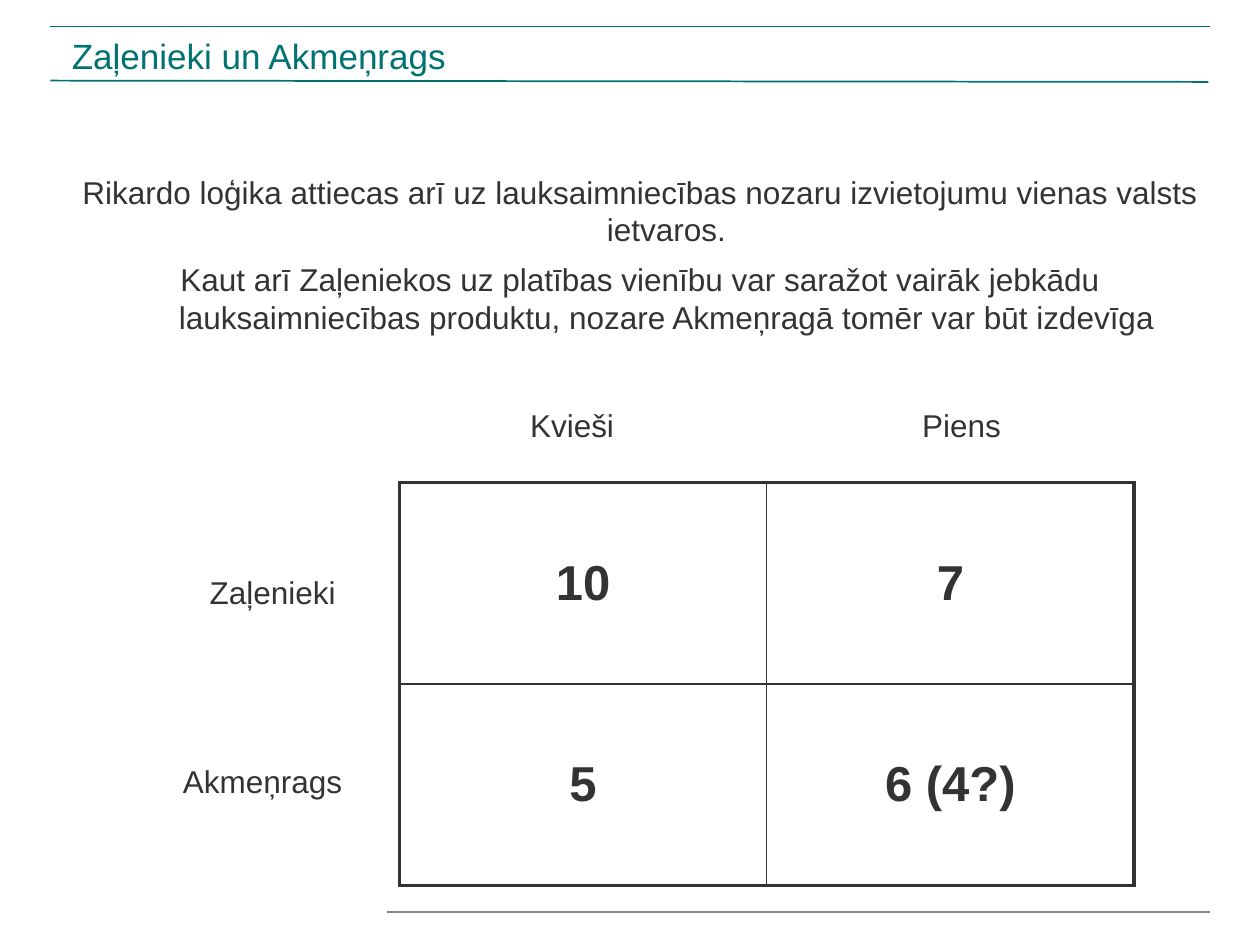
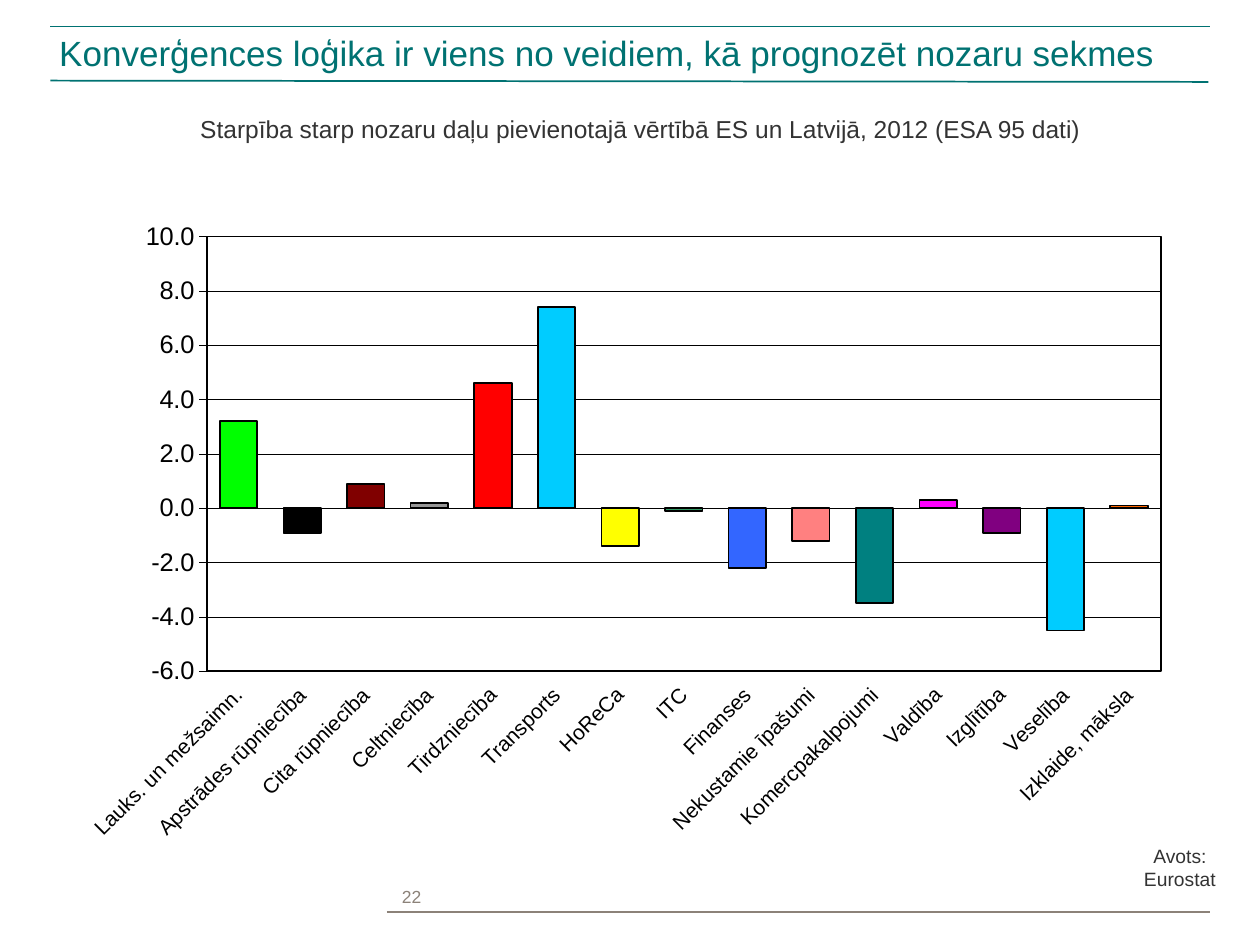
"""Two slides on where farming and other sectors settle: a yield table and a sector chart."""
from lxml import etree
from pptx import Presentation
from pptx.chart.data import CategoryChartData
from pptx.dml.color import RGBColor
from pptx.enum.chart import XL_CHART_TYPE, XL_TICK_LABEL_POSITION, XL_TICK_MARK
from pptx.enum.shapes import MSO_CONNECTOR
from pptx.enum.text import MSO_ANCHOR, PP_ALIGN
from pptx.oxml import parse_xml
from pptx.oxml.ns import nsdecls, qn
from pptx.util import Inches, Pt

COLUMN = XL_CHART_TYPE.COLUMN_CLUSTERED
LABELS_LOW = XL_TICK_LABEL_POSITION.LOW
TICK_OUT, TICK_NONE = XL_TICK_MARK.OUTSIDE, XL_TICK_MARK.NONE
STRAIGHT = MSO_CONNECTOR.STRAIGHT
LEFT, CENTER = PP_ALIGN.LEFT, PP_ALIGN.CENTER
TOP, MIDDLE, BOTTOM = MSO_ANCHOR.TOP, MSO_ANCHOR.MIDDLE, MSO_ANCHOR.BOTTOM

FONT = "Arial"
COLORS = {"teal": "007272", "taupe": "8C8279", "text": "333333", "black": "000000"}
TITLE_INSETS = (0.07, 0.04)

YIELDS = [["10", "7"], ["5", "6 (4?)"]]
SECTORS = [
    ("Lauks. un mežsaimn.", 3.2, "00FF00"),
    ("Apstrādes rūpniecība", -0.9, "000000"),
    ("Cita rūpniecība", 0.9, "800000"),
    ("Celtniecība", 0.2, "969696"),
    ("Tirdzniecība", 4.6, "FF0000"),
    ("Transports", 7.4, "00CCFF"),
    ("HoReCa", -1.4, "FFFF00"),
    ("ITC", -0.1, "339966"),
    ("Finanses", -2.2, "3366FF"),
    ("Nekustamie īpašumi", -1.2, "FF8080"),
    ("Komercpakalpojumi", -3.5, "008080"),
    ("Valdība", 0.3, "FF00FF"),
    ("Izglītība", -0.9, "800080"),
    ("Veselība", -4.5, "00CCFF"),
    ("Izklaide, māksla", 0.1, "FF6600"),
]


class Deck:
    """Holds the shared style and the slide being filled."""

    def __init__(self):
        self.presentation = Presentation()
        self.presentation.slide_width = Inches(10)
        self.presentation.slide_height = Inches(7.5)
        self.slide = None

    def add_slide(self, title, title_box):
        """Start a slide with the three rules and a title."""
        self.slide = self.presentation.slides.add_slide(self.presentation.slide_layouts[6])
        self.rule((3.07, 7.24), (9.6, 7.24), "taupe")
        self.rule((0.4, 0.64), (9.59, 0.65), "teal")
        self.rule((0.4, 0.21), (9.6, 0.21), "teal")
        frame = self.text(title_box, [title], 20, "teal", LEFT, MIDDLE, TITLE_INSETS)
        frame.paragraphs[0].line_spacing = 0.8

    def rule(self, start, end, color):
        """Draw a thin straight line."""
        connector = self.slide.shapes.add_connector(
            STRAIGHT, *[Inches(value) for value in (*start, *end)])
        self.style_line(connector.line, color, 1)
        etree.SubElement(connector._element.spPr, qn("a:effectLst"))

    def style_line(self, line, color, width):
        """Set the colour and width of a line."""
        line.color.rgb = RGBColor.from_string(COLORS[color])
        line.width = Pt(width)

    def style_font(self, font, size, color, bold=False):
        """Set the deck font on a font object."""
        font.name, font.size, font.bold = FONT, Pt(size), bold
        font.color.rgb = RGBColor.from_string(COLORS[color])

    def text(self, box, paragraphs, size, color="text", align=CENTER, anchor=TOP,
             insets=(0.1, 0.05), hanging=0, space_before=0):
        """Add a wrapped text box and return its frame."""
        shape = self.slide.shapes.add_textbox(*[Inches(value) for value in box])
        frame = shape.text_frame
        frame.word_wrap = True
        frame.vertical_anchor = anchor
        frame.margin_left = frame.margin_right = Inches(insets[0])
        frame.margin_top = frame.margin_bottom = Inches(insets[1])
        for index, content in enumerate(paragraphs):
            paragraph = frame.add_paragraph() if index else frame.paragraphs[0]
            paragraph.text = content
            paragraph.alignment = align
            if index:
                paragraph.space_before = Pt(space_before)
            if hanging:
                properties = paragraph._p.get_or_add_pPr()
                properties.set("marL", str(Inches(hanging)))
                properties.set("indent", str(-Inches(hanging)))
            self.style_font(paragraph.font, size, color)
        return frame

    def table(self, box, rows):
        """Add an evenly split table with a heavy frame and light inner lines."""
        row_count, column_count = len(rows), len(rows[0])
        frame = self.slide.shapes.add_table(
            row_count, column_count, *[Inches(value) for value in box])
        table = frame.table
        table.first_row = table.horz_banding = False
        for row, values in enumerate(rows):
            for column, value in enumerate(values):
                cell = table.cell(row, column)
                cell.text = value
                cell.vertical_anchor = MIDDLE
                cell.fill.background()
                paragraph = cell.text_frame.paragraphs[0]
                paragraph.alignment = CENTER
                self.style_font(paragraph.font, 28, "text", bold=True)
                self.borders(cell, {
                    "L": column == 0, "R": column == column_count - 1,
                    "T": row == 0, "B": row == row_count - 1})

    def borders(self, cell, outer_sides):
        """Draw the four cell borders, heavier on the outer sides."""
        properties = cell._tc.get_or_add_tcPr()
        for index, (side, outer) in enumerate(outer_sides.items()):
            width = Pt(2.25 if outer else 1)
            properties.insert(index, parse_xml(
                f'<a:ln{side} {nsdecls("a")} w="{width}"><a:solidFill>'
                f'<a:srgbClr val="{COLORS["text"]}"/></a:solidFill></a:ln{side}>'))

    def column_chart(self, box, points, plot_box):
        """Add a column chart with one colour per category."""
        data = CategoryChartData(number_format="0.0")
        data.categories = [name for name, _, _ in points]
        data.add_series("Series 1", [value for _, value, _ in points])
        chart = self.slide.shapes.add_chart(
            COLUMN, *[Inches(value) for value in box], data).chart
        chart.has_legend = chart.has_title = False
        self.style_font(chart.font, 14.5, "black")
        plot = chart.plots[0]
        plot.gap_width = 70
        plot.vary_by_categories = False
        series = plot.series[0]
        series.invert_if_negative = False
        for index, (_, _, color) in enumerate(points):
            bar = series.points[index].format
            bar.fill.solid()
            bar.fill.fore_color.rgb = RGBColor.from_string(color)
            self.style_line(bar.line, "black", 1)
        self.style_axes(chart)
        self.place_plot(chart, plot_box)

    def style_axes(self, chart):
        """Set scale, grid and labels of both axes."""
        values, categories = chart.value_axis, chart.category_axis
        values.minimum_scale, values.maximum_scale, values.major_unit = -6, 10, 2
        values.tick_labels.number_format = "#,##0.0"
        values.tick_labels.number_format_is_linked = False
        self.style_line(values.format.line, "black", 0.25)
        self.style_line(values.major_gridlines.format.line, "black", 0.25)
        categories.tick_label_position = LABELS_LOW
        categories.format.line.fill.background()
        for axis, size in ((values, 14.5), (categories, 12)):
            axis.major_tick_mark, axis.minor_tick_mark = TICK_OUT, TICK_NONE
            self.style_font(axis.tick_labels.font, size, "black")
        body = categories._element.find(qn("c:txPr")).find(qn("a:bodyPr"))
        body.set("rot", str(-45 * 60000))
        body.set("vert", "horz")

    def place_plot(self, chart, plot_box):
        """Fix the inner plot area and frame it."""
        area = chart._chartSpace.chart.plotArea
        for layout in area.findall(qn("c:layout")):
            area.remove(layout)
        sizes = "".join(f'<c:{key} val="{value}"/>' for key, value in zip("xywh", plot_box))
        area.insert(0, parse_xml(
            f'<c:layout {nsdecls("c")}><c:manualLayout><c:layoutTarget val="inner"/>'
            f'<c:xMode val="edge"/><c:yMode val="edge"/>{sizes}</c:manualLayout></c:layout>'))
        area.append(parse_xml(
            f'<c:spPr {nsdecls("c", "a")}><a:noFill/><a:ln w="{Pt(1)}"><a:solidFill>'
            f'<a:srgbClr val="{COLORS["black"]}"/></a:solidFill></a:ln></c:spPr>'))


def main():
    """Build both slides and save the deck."""
    deck = Deck()

    deck.add_slide("Zaļenieki un Akmeņrags", (0.5, 0, 9, 0.95))
    deck.text((0.58, 1.33, 9, 1.42), [
        "Rikardo loģika attiecas arī uz lauksaimniecības nozaru izvietojumu "
        "vienas valsts ietvaros.",
        "Kaut arī Zaļeniekos uz platības vienību var saražot vairāk jebkādu "
        "lauksaimniecības produktu, nozare Akmeņragā tomēr var būt izdevīga",
    ], 18, insets=(0.04, 0.04), hanging=0.42, space_before=7)
    deck.table((3.17, 3.83, 5.83, 3.2), YIELDS)
    for label, left, top, width in (
            ("Kvieši", 3.33, 3.17, 2.42), ("Piens", 6.42, 3.17, 2.42),
            ("Zaļenieki", 1.33, 4.5, 1.67), ("Akmeņrags", 1.25, 6, 1.67)):
        deck.text((left, top, width, 0.4), [label], 18)

    deck.add_slide("Konverģences loģika ir viens no veidiem, kā prognozēt nozaru sekmes",
                   (0.4, 0.23, 9.09, 0.44))
    deck.text((3.12, 6.96, 0.5, 0.28), ["22"], 10, "taupe", LEFT, BOTTOM, TITLE_INSETS)
    deck.column_chart((0.17, 1.5, 9.19, 6), SECTORS, (0.16, 0.063, 0.824, 0.575))
    deck.text((1.32, 0.86, 7.53, 0.34), [
        "Starpība starp nozaru daļu pievienotajā vērtībā ES un Latvijā, 2012 (ESA 95 dati)"], 14)
    deck.text((8.85, 6.65, 1.03, 0.62), ["Avots: Eurostat"], 11)

    deck.presentation.save("out.pptx")


if __name__ == "__main__":
    main()
